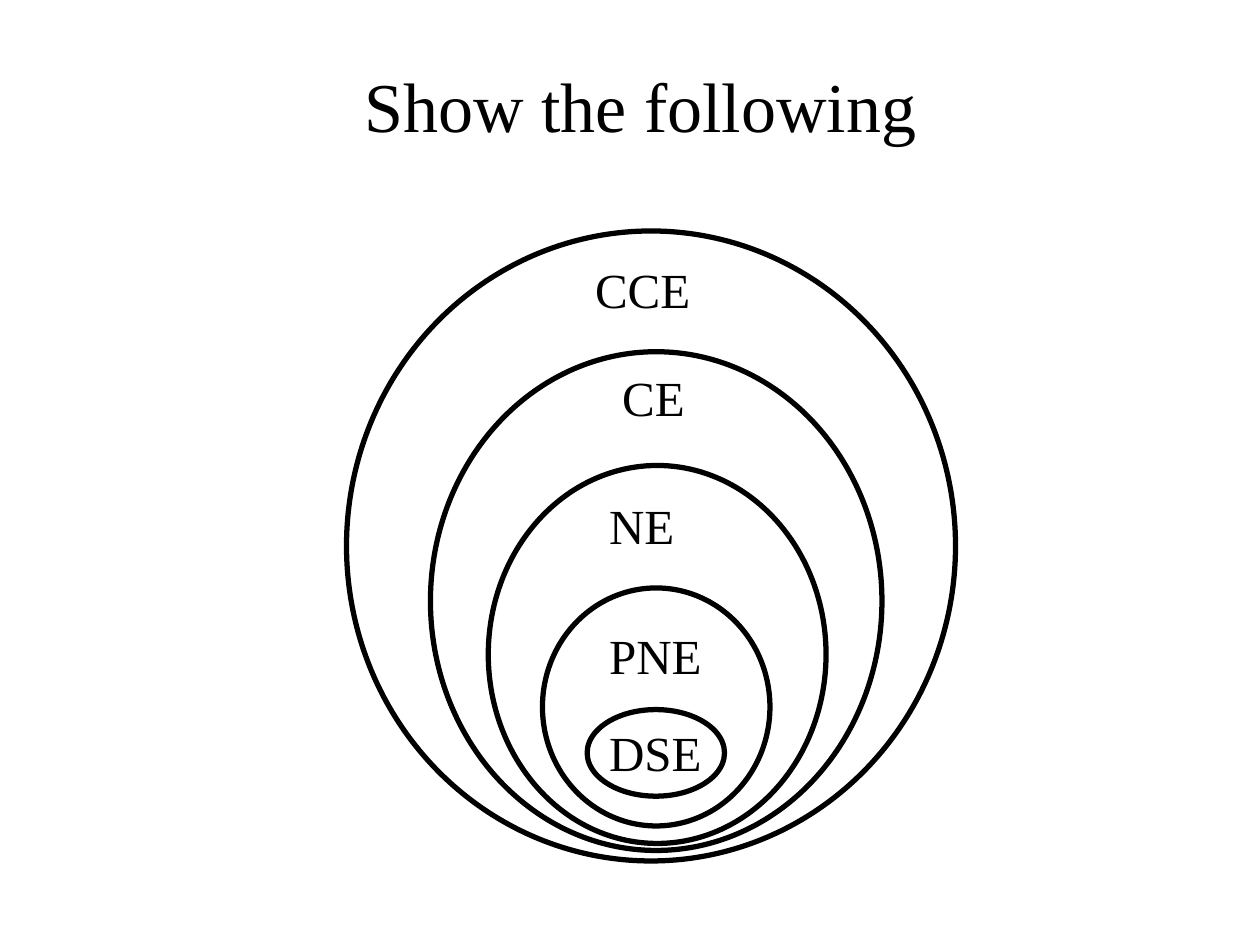
from pptx import Presentation
from pptx.dml.color import RGBColor
from pptx.enum.shapes import MSO_SHAPE
from pptx.enum.text import MSO_ANCHOR, MSO_AUTO_SIZE, PP_ALIGN
from pptx.util import Pt

BLACK = RGBColor(0, 0, 0)
WHITE = RGBColor(255, 255, 255)
FONT = "Times New Roman"

# Nested classes, outermost first: label, ellipse box, label box (points)
CLASSES = [
    ("CCE", (198, 132, 348, 360), (333, 145, 69, 41)),
    ("CE", (246, 201, 258, 285), (348.5, 206.5, 52.5, 41)),
    ("NE", (279, 266, 193, 216), (341, 279.5, 57.5, 41)),
    ("PNE", (310, 336, 130, 136), (341, 354, 92, 41)),
    ("DSE", (335.5, 405.5, 78.5, 49.5), (341, 409.5, 92, 41)),
]


def write(frame, wording, size):
    frame.text = wording
    font = frame.paragraphs[0].runs[0].font
    font.name = FONT
    font.size = Pt(size)
    font.color.rgb = BLACK


prs = Presentation()
prs.slide_width, prs.slide_height = Pt(720), Pt(540)
slide = prs.slides.add_slide(prs.slide_layouts[5])
slide.background.fill.solid()
slide.background.fill.fore_color.rgb = WHITE

# Title
title = slide.shapes.title
title.left, title.top, title.width, title.height = Pt(42), Pt(6), Pt(648), Pt(108)
write(title.text_frame, "Show the following", 40)
title.text_frame.vertical_anchor = MSO_ANCHOR.MIDDLE
title.text_frame.paragraphs[0].alignment = PP_ALIGN.CENTER

# Each class is an ellipse with its label
for name, ellipse_box, label_box in CLASSES:
    ellipse = slide.shapes.add_shape(MSO_SHAPE.OVAL, *map(Pt, ellipse_box))
    ellipse.shadow.inherit = False
    ellipse.fill.background()
    ellipse.line.color.rgb = BLACK
    ellipse.line.width = Pt(3)

    label = slide.shapes.add_textbox(*map(Pt, label_box))
    label.text_frame.word_wrap = name != "CCE"
    label.text_frame.auto_size = MSO_AUTO_SIZE.SHAPE_TO_FIT_TEXT
    write(label.text_frame, name, 28)

prs.save("out.pptx")
